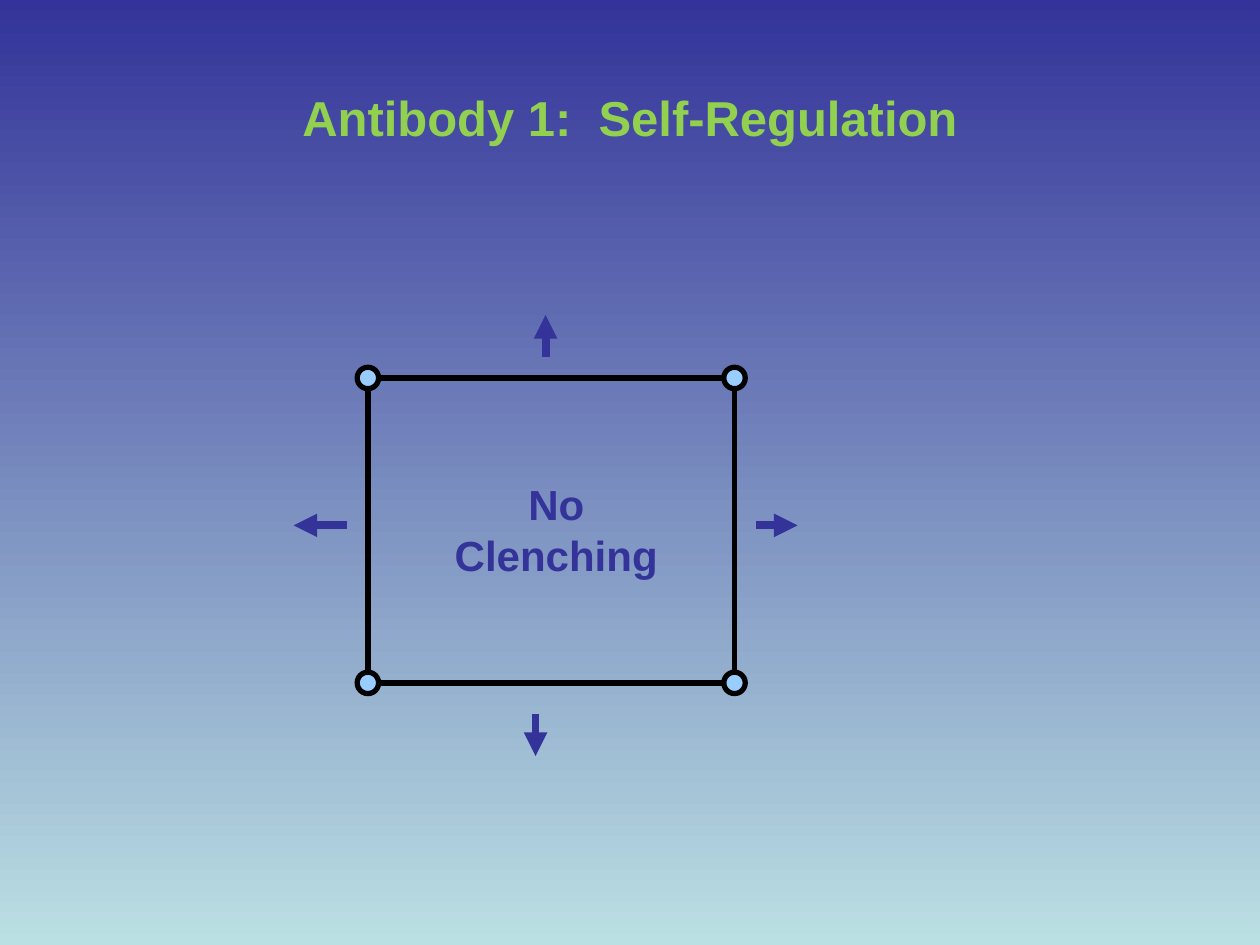
"""Build the self-regulation slide: a square of four nodes with outward arrows."""
from itertools import product

from lxml.etree import SubElement
from pptx import Presentation
from pptx.dml.color import RGBColor
from pptx.enum.shapes import MSO_CONNECTOR, MSO_SHAPE
from pptx.enum.text import MSO_ANCHOR, PP_ALIGN
from pptx.oxml.ns import qn
from pptx.util import Inches, Pt

NAVY = RGBColor(0x33, 0x33, 0x99)
PALE = RGBColor(0xBB, 0xE0, 0xE3)
GREEN = RGBColor(0x92, 0xD0, 0x50)
SKY = RGBColor(0x99, 0xCC, 0xFF)
BLACK = RGBColor(0, 0, 0)

TEXTS = [
    ("Antibody 1:  Self-Regulation", (0.5, 0.3, 9, 1.25), 28, GREEN, MSO_ANCHOR.MIDDLE),
    ("No Clenching", (3.5, 3.75, 1.83, 0.9), 24, NAVY, MSO_ANCHOR.TOP),
]
LEFT, RIGHT, TOP, BOTTOM = 2.92, 5.83, 3, 5.42
RADIUS = 0.085
ARROWS = [
    (6, 4.17, 6.33, 4.17),
    (4.25, 5.67, 4.25, 6),
    (2.75, 4.17, 2.33, 4.17),
    (4.33, 2.83, 4.33, 2.5),
]


def add_text(s, text, box, size, color, anchor):
    tf = s.shapes.add_textbox(*map(Inches, box)).text_frame
    tf.word_wrap = True
    tf.vertical_anchor = anchor
    tf.text = text
    p = tf.paragraphs[0]
    p.alignment = PP_ALIGN.CENTER
    font = p.runs[0].font
    font.name, font.size, font.bold = "Arial", Pt(size), True
    font.color.rgb = color


def add_node(s, x, y):
    sp = s.shapes.add_shape(
        MSO_SHAPE.OVAL, Inches(x - RADIUS), Inches(y - RADIUS),
        Inches(2 * RADIUS), Inches(2 * RADIUS))
    sp.shadow.inherit = False
    sp.fill.solid()
    sp.fill.fore_color.rgb = SKY
    sp.line.color.rgb = BLACK
    sp.line.width = Pt(3)


def add_line(s, ends, color, width, arrow=False):
    line = s.shapes.add_connector(MSO_CONNECTOR.STRAIGHT, *map(Inches, ends))
    line.line.color.rgb = color
    line.line.width = Pt(width)
    if arrow:
        SubElement(line.line._get_or_add_ln(), qn("a:tailEnd"), type="triangle")
    SubElement(line._element.spPr, qn("a:effectLst"))


def main():
    prs = Presentation()
    prs.slide_width, prs.slide_height = Inches(10), Inches(7.5)
    s = prs.slides.add_slide(prs.slide_layouts[6])
    fill = s.background.fill
    fill.gradient()
    fill.gradient_angle = 270
    for stop, position, color in zip(fill.gradient_stops, (0, 1), (NAVY, PALE)):
        stop.position = position
        stop.color.rgb = color

    for x, y in product((LEFT, RIGHT), (TOP, BOTTOM)):
        add_node(s, x, y)
    for y in (TOP, BOTTOM):
        add_line(s, (LEFT + RADIUS, y, RIGHT - RADIUS, y), BLACK, 3)
    for x in (LEFT, RIGHT):
        add_line(s, (x, TOP + RADIUS, x, BOTTOM - RADIUS), BLACK, 3)
    for ends in ARROWS:
        add_line(s, ends, NAVY, 4.5, arrow=True)
    for text in TEXTS:
        add_text(s, *text)
    prs.save("out.pptx")


if __name__ == "__main__":
    main()
